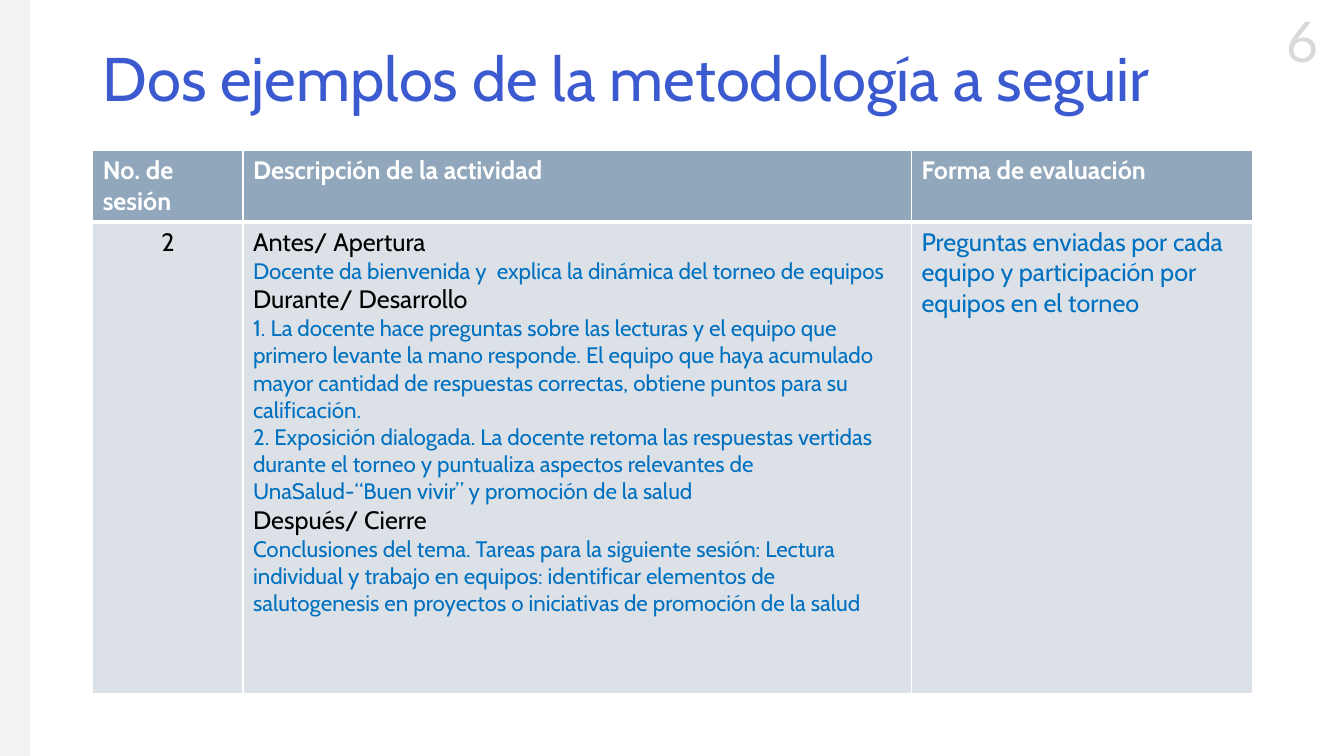
from pptx import Presentation
from pptx.dml.color import RGBColor
from pptx.enum.shapes import MSO_SHAPE as Shape
from pptx.enum.text import MSO_ANCHOR as Anchor, PP_ALIGN as Align
from pptx.oxml.ns import qn
from pptx.util import Inches, Pt
from lxml import etree

COLORS = {
    "title": "3C5ACF",
    "number": "D9D9D9",
    "band": "F2F2F2",
    "header": "91A7BC",
    "body": "DCE1E7",
    "white": "FFFFFF",
    "black": "000000",
    "blue": "0070C0",
}

# Text styles: size, colour, bold
HEADER = (18, "white", True)
STAGE = (18, "black", False)
DETAIL = (16, "blue", False)
EVALUATION = (18, "blue", False)

# Each cell is a list of paragraphs; each paragraph is a list of (line, style)
HEADINGS = [
    [[(heading, HEADER)]]
    for heading in ("No. de sesión", "Descripción de la actividad", "Forma de evaluación")
]
ACTIVITY = [
    [("Antes/ Apertura", STAGE)],
    [("Docente da bienvenida y  explica la dinámica del torneo de equipos", DETAIL)],
    [("Durante/ Desarrollo", STAGE)],
    [("1. La docente hace preguntas sobre las lecturas y el equipo que primero levante "
      "la mano responde. El equipo que haya acumulado mayor cantidad de respuestas "
      "correctas, obtiene puntos para su calificación.", DETAIL)],
    [("2. Exposición dialogada. La docente retoma las respuestas vertidas durante el "
      "torneo y puntualiza aspectos relevantes de UnaSalud-“Buen vivir” y promoción "
      "de la salud", DETAIL)],
    [("Después/ Cierre", STAGE),
     ("Conclusiones del tema. Tareas para la siguiente sesión: Lectura individual y "
      "trabajo en equipos: identificar elementos de salutogenesis en proyectos o "
      "iniciativas de promoción de la salud", DETAIL)],
]
SESSION = [
    [[("2", STAGE)]],
    ACTIVITY,
    [[("Preguntas enviadas por cada equipo y participación por equipos en el torneo",
       EVALUATION)]],
]
COLUMN_WIDTHS = (1.49, 6.63, 3.38)
ROW_HEIGHTS = (0.71, 4.68)


def rgb(name):
    return RGBColor.from_string(COLORS[name])


def style_run(run, size, color, bold=False, font="Cabin"):
    run.font.name = font
    run.font.size = Pt(size)
    run.font.bold = bold
    run.font.color.rgb = rgb(color)


def add_band(slide, left, top, width, height):
    band = slide.shapes.add_shape(
        Shape.RECTANGLE, Inches(left), Inches(top), Inches(width), Inches(height))
    band.shadow.inherit = False
    band.fill.solid()
    band.fill.fore_color.rgb = rgb("band")
    band.line.fill.background()


def add_label(slide, box, text, size, color, font="Cabin", wrap=True):
    """Add a one-paragraph text box and return its text frame."""
    frame = slide.shapes.add_textbox(*map(Inches, box)).text_frame
    frame.word_wrap = wrap
    frame.text = text
    style_run(frame.paragraphs[0].runs[0], size, color, font=font)
    return frame


def set_borders(cell, **widths):
    """Draw white cell borders; widths maps L, R, T and B to points."""
    properties = cell._tc.get_or_add_tcPr()
    for position, (side, width) in enumerate(widths.items()):
        line = etree.Element(qn(f"a:ln{side}"), w=str(Pt(width)))
        fill = etree.SubElement(line, qn("a:solidFill"))
        etree.SubElement(fill, qn("a:srgbClr"), val=COLORS["white"])
        properties.insert(position, line)


def fill_cell(cell, paragraphs, background):
    cell.fill.solid()
    cell.fill.fore_color.rgb = rgb(background)
    frame = cell.text_frame
    for index, lines in enumerate(paragraphs):
        paragraph = frame.add_paragraph() if index else frame.paragraphs[0]
        paragraph.text = "\v".join(text for text, _ in lines)
        for run, (_, style) in zip(paragraph.runs, lines):
            style_run(run, *style)


def add_session_table(slide):
    table = slide.shapes.add_table(
        len(ROW_HEIGHTS), len(COLUMN_WIDTHS), Inches(0.92), Inches(1.49),
        Inches(sum(COLUMN_WIDTHS)), Inches(sum(ROW_HEIGHTS))).table
    for column, width in zip(table.columns, COLUMN_WIDTHS):
        column.width = Inches(width)
    for row, height in zip(table.rows, ROW_HEIGHTS):
        row.height = Inches(height)
    for column, (heading, content) in enumerate(zip(HEADINGS, SESSION)):
        header_cell, body_cell = table.cell(0, column), table.cell(1, column)
        fill_cell(header_cell, heading, "header")
        fill_cell(body_cell, content, "body")
        set_borders(header_cell, L=1, R=1, T=1, B=3)
        set_borders(body_cell, L=1, R=1, T=3, B=1)
    table.cell(1, 0).text_frame.paragraphs[0].alignment = Align.CENTER


def main():
    deck = Presentation()
    deck.slide_width, deck.slide_height = Inches(13.33), Inches(7.5)
    slide = deck.slides.add_slide(deck.slide_layouts[6])

    number = add_label(slide, (12.54, 0.02, 0.75, 0.77), "6", 40, "number", "Lato", wrap=False)
    number.paragraphs[0].alignment = Align.CENTER
    add_band(slide, 0, 0, 0.3, 7.5)
    title = add_label(slide, (0.92, 0.08, 11.5, 1.45),
                      "Dos ejemplos de la metodología a seguir", 44, "title")
    title.vertical_anchor = Anchor.MIDDLE
    title.paragraphs[0].line_spacing = 0.9
    add_session_table(slide)

    deck.save("out.pptx")


if __name__ == "__main__":
    main()
